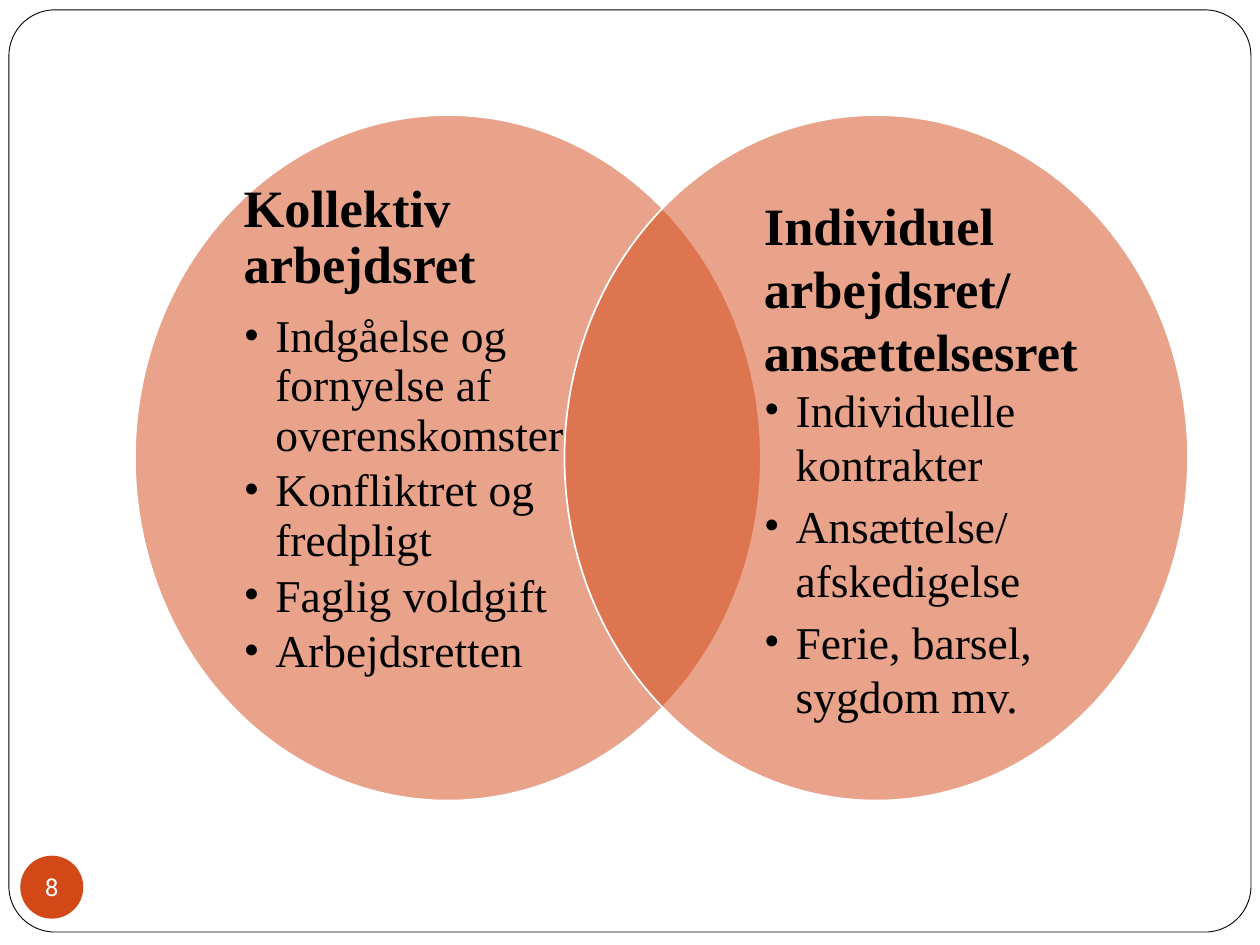
import pptx
import pptx.util
import pptx.dml.color
import pptx.enum.shapes
import pptx.enum.text
import pptx.oxml
import pptx.oxml.ns
import lxml.etree

Cm = pptx.util.Cm
Pt = pptx.util.Pt
SHAPE = pptx.enum.shapes.MSO_SHAPE
COLORS = {"paper": "FFFFFF", "ink": "000000", "accent": "D34817"}
TEXT_FONT = "Times New Roman"
HEADING_SIZE, BULLET_SIZE = 30, 26
BULLET_INDENT = Cm(0.64)


def color(name):
    return pptx.dml.color.RGBColor.from_string(COLORS[name])


def add_child(parent, tag, **attributes):
    child = lxml.etree.SubElement(parent, pptx.oxml.ns.qn(tag))
    for key, value in attributes.items():
        child.set(key, value)
    return child


def draw_shape(shapes, kind, box, fill, line=None, weight=1, alpha=None):
    shape = shapes.add_shape(kind, *(Cm(length) for length in box))
    shape.shadow.inherit = False
    shape.fill.solid()
    shape.fill.fore_color.rgb = color(fill)
    if alpha is not None:
        tint = shape.fill._xPr.find(".//" + pptx.oxml.ns.qn("a:srgbClr"))
        add_child(tint, "a:alpha", val=str(alpha * 1000))
    if line:
        shape.line.color.rgb = color(line)
        shape.line.width = Pt(weight)
    else:
        shape.line.fill.background()
    return shape


def prepare_frame(frame, wrap=True, left=0, bottom=0):
    frame.word_wrap = wrap
    frame.vertical_anchor = pptx.enum.text.MSO_ANCHOR.MIDDLE
    frame.margin_top = frame.margin_right = 0
    frame.margin_left = Cm(left)
    frame.margin_bottom = Cm(bottom)


def write_para(para, text, size, font=TEXT_FONT, ink="ink", bold=False,
               align="LEFT", spacing=1.0, after=0, bullet=False):
    para.alignment = getattr(pptx.enum.text.PP_ALIGN, align)
    para.line_spacing = spacing
    para.space_after = Pt(after)
    if bullet:
        para.level = 1
        properties = para._p.get_or_add_pPr()
        properties.set("marL", str(BULLET_INDENT))
        properties.set("indent", str(-BULLET_INDENT))
        add_child(properties, "a:buFont", typeface=font)
        add_child(properties, "a:buChar", char="•")
    span = para.add_run()
    span.text = text
    span.font.name = font
    span.font.size = Pt(size)
    span.font.bold = bold
    span.font.color.rgb = color(ink)


def add_frame(page, box):
    border = draw_shape(page.shapes, SHAPE.ROUNDED_RECTANGLE, box, "paper", "ink", 0.5)
    border.adjustments[0] = 0.05


def add_page_number(page, box, number):
    badge = draw_shape(page.shapes, SHAPE.OVAL, box, "accent")
    prepare_frame(badge.text_frame, wrap=False)
    write_para(badge.text_frame.paragraphs[0], number, 14, font="Roboto",
               ink="paper", align="CENTER")


def add_venn_circle(group, box, headings, bullets, inset, text_width,
                    spacing=1.0, heading_after=0, bottom=0):
    left, top, _, height = box
    draw_shape(group.shapes, SHAPE.OVAL, box, "accent", "paper", alpha=50)

    # Text sits inside the circle, clear of the overlap
    margin = 1.63
    text_box = group.shapes.add_textbox(Cm(left + inset), Cm(top + margin),
                                        Cm(text_width), Cm(height - 2 * margin))
    frame = text_box.text_frame
    prepare_frame(frame, left=0.44, bottom=bottom)
    lines = [(text, False) for text in headings] + [(text, True) for text in bullets]
    for index, (text, bullet) in enumerate(lines):
        para = frame.add_paragraph() if index else frame.paragraphs[0]
        size = BULLET_SIZE if bullet else HEADING_SIZE
        after = 0.15 * BULLET_SIZE if bullet else heading_after
        write_para(para, text, size, bold=not bullet, spacing=spacing,
                   after=after, bullet=bullet)


def main():
    deck = pptx.Presentation()
    deck.slide_width, deck.slide_height = Cm(25.4), Cm(19.05)
    page = deck.slides.add_slide(deck.slide_layouts[6])

    # Border and page number
    add_frame(page, (0.18, 0.2, 25.04, 18.59))
    add_page_number(page, (0.41, 17.25, 1.27, 1.27), "8")

    # Two overlapping circles
    venn = page.shapes.add_group_shape()
    add_venn_circle(
        venn, (2.72, 2.32, 12.62, 13.82),
        ["Kollektiv arbejdsret"],
        ["Indgåelse og fornyelse af overenskomster", "Konfliktret og fredpligt",
         "Faglig voldgift", "Arbejdsretten"],
        inset=1.75, text_width=7.29, spacing=0.9,
        heading_after=0.35 * HEADING_SIZE, bottom=1.13)
    add_venn_circle(
        venn, (11.38, 2.32, 12.57, 13.82),
        ["Individuel arbejdsret/", "ansættelsesret"],
        ["Individuelle kontrakter", "Ansættelse/ afskedigelse",
         "Ferie, barsel, sygdom mv."],
        inset=3.58, text_width=7.24)

    deck.save("out.pptx")


if __name__ == "__main__":
    main()
